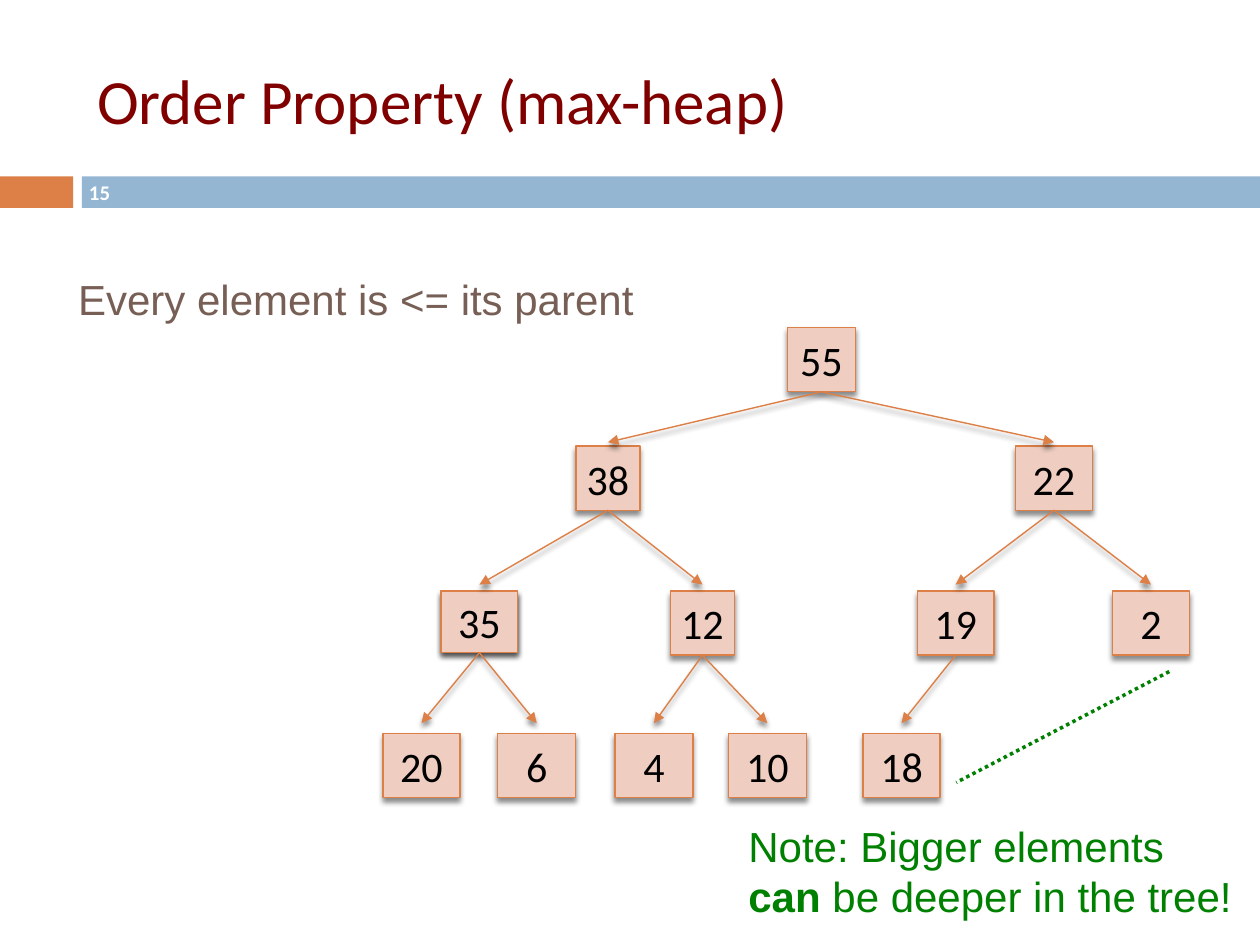
from dataclasses import dataclass

from lxml import etree
from pptx import Presentation
from pptx.dml.color import RGBColor
from pptx.enum.dml import MSO_LINE
from pptx.enum.shapes import MSO_CONNECTOR, MSO_SHAPE
from pptx.enum.text import MSO_ANCHOR, MSO_AUTO_SIZE, PP_ALIGN
from pptx.oxml.ns import qn
from pptx.util import Inches, Pt

RECT = MSO_SHAPE.RECTANGLE
STRAIGHT = MSO_CONNECTOR.STRAIGHT
DOTTED = MSO_LINE.ROUND_DOT
MIDDLE, TOP = MSO_ANCHOR.MIDDLE, MSO_ANCHOR.TOP
LEFT, CENTER = PP_ALIGN.LEFT, PP_ALIGN.CENTER
NO_AUTOFIT = MSO_AUTO_SIZE.NONE
BOTTOM_SIDE = 2

ORANGE, BLUE, PINK = "DD8047", "94B6D2", "EFCDC1"
MAROON, BROWN, GREEN = "800000", "775F55", "008000"
BLACK, WHITE = "000000", "FFFFFF"
OUTLINE = 0.79
INSET = 0.04


@dataclass(frozen=True)
class Node:
    value: str
    level: int
    left: float
    width: float = 0.61
    height: float = 0.51
    parent: str = ""

    @property
    def center(self) -> float:
        return self.left + self.width / 2


# Top of each tree level, and the gap between an arrow tip and its node
LEVEL_TOPS = (2.6, 3.54, 4.69, 5.82)
TIP_GAPS = (0, 0.03, 0.05, 0.08)

HEAP = (
    Node("55", 0, 6.25, 0.54),
    Node("38", 1, 4.57, 0.51, parent="55"),
    Node("22", 1, 8.06, parent="55"),
    Node("35", 2, 3.5, height=0.49, parent="38"),
    Node("12", 2, 5.32, 0.51, parent="38"),
    Node("19", 2, 7.28, parent="22"),
    Node("2", 2, 8.83, parent="22"),
    Node("20", 3, 3.04, parent="35"),
    Node("6", 3, 3.95, 0.62, parent="35"),
    Node("4", 3, 4.88, 0.62, parent="12"),
    Node("10", 3, 5.78, 0.62, parent="12"),
    Node("18", 3, 6.85, parent="19"),
)
BACKING = Node("", 2, 3.5, height=0.47)


def rgb(color: str) -> RGBColor:
    return RGBColor.from_string(color)


def box(left: float, top: float, width: float, height: float) -> tuple:
    return Inches(left), Inches(top), Inches(width), Inches(height)


def place(shape, *bounds: float) -> None:
    shape.left, shape.top, shape.width, shape.height = box(*bounds)


def add_run(paragraph, text: str, size: float, font: str, color: str, bold: bool = False) -> None:
    run = paragraph.add_run()
    run.text = text
    run.font.size = Pt(size)
    run.font.name = font
    run.font.bold = bold
    run.font.color.rgb = rgb(color)


def format_frame(frame, anchor, align, inset: bool = True, wrap: bool = True):
    """Set up a text frame and return its first paragraph."""
    frame.auto_size = NO_AUTOFIT
    frame.word_wrap = wrap
    frame.vertical_anchor = anchor
    paragraph = frame.paragraphs[0]
    paragraph.alignment = align
    paragraph.space_before = Pt(0)
    if inset:
        frame.margin_left = frame.margin_top = frame.margin_bottom = 0
        frame.margin_right = Inches(INSET)
        properties = paragraph._p.get_or_add_pPr()
        properties.set("marL", str(Inches(INSET)))
        properties.set("indent", "0")
        etree.SubElement(properties, qn("a:buNone"))
    return paragraph


def add_shadow(shape) -> None:
    effects = etree.SubElement(shape._element.spPr, qn("a:effectLst"))
    shadow = etree.SubElement(effects, qn("a:outerShdw"), blurRad=str(Pt(3)),
                              dist=str(Pt(2.4)), dir="5400000", rotWithShape="0")
    color = etree.SubElement(shadow, qn("a:srgbClr"), val=BLACK)
    etree.SubElement(color, qn("a:alpha"), val="45000")


def set_line(shape, color: str, width: float) -> None:
    shape.line.width = Pt(width)
    shape.line.color.rgb = rgb(color)


def add_band(slide, left: float, width: float, color: str) -> None:
    band = slide.shapes.add_shape(RECT, *box(left, 1.4, width, 0.25))
    band.fill.solid()
    band.fill.fore_color.rgb = rgb(color)
    band.line.fill.background()
    band.shadow.inherit = False


def add_node(slide, node: Node):
    square = slide.shapes.add_shape(
        RECT, *box(node.left, LEVEL_TOPS[node.level], node.width, node.height))
    square.fill.solid()
    square.fill.fore_color.rgb = rgb(PINK)
    set_line(square, ORANGE, OUTLINE)
    add_shadow(square)
    if node.value:
        paragraph = format_frame(square.text_frame, MIDDLE, CENTER)
        add_run(paragraph, node.value, 24, "Calibri", BLACK)
    return square


def add_branch(slide, parent_square, child: Node) -> None:
    tip_y = LEVEL_TOPS[child.level] - TIP_GAPS[child.level]
    branch = slide.shapes.add_connector(
        STRAIGHT, 0, 0, Inches(child.center), Inches(tip_y))
    branch.begin_connect(parent_square, BOTTOM_SIDE)
    set_line(branch, ORANGE, OUTLINE)
    etree.SubElement(branch.line._get_or_add_ln(), qn("a:tailEnd"), type="triangle")
    add_shadow(branch)


def main() -> None:
    deck = Presentation()
    deck.slide_width, deck.slide_height = Inches(10), Inches(7.5)
    slide = deck.slides.add_slide(deck.slide_layouts[1])

    # Header: title, bands and page number
    title = slide.shapes.title
    place(title, 0.67, 0.25, 8.92, 1.08)
    heading = format_frame(title.text_frame, MIDDLE, LEFT, inset=False)
    add_run(heading, "Order Property (max-heap)", 36, "Calibri", MAROON)
    add_band(slide, 0, 0.58, ORANGE)
    add_band(slide, 0.65, 9.35, BLUE)
    page_number = slide.shapes.add_textbox(*box(0.5, 1.39, 0.58, 0.27))
    number = format_frame(page_number.text_frame, MIDDLE, CENTER, inset=False)
    add_run(number, "15", 11.9, "Calibri", WHITE, bold=True)

    # Heap rule
    rule = slide.placeholders[1]
    place(rule, 0.58, 2.17, 4.5, 0.4)
    statement = format_frame(rule.text_frame, TOP, LEFT, wrap=False)
    add_run(statement, "Every element is <= its parent", 24, "Arial", BROWN)

    # Tree: nodes first, then the branches between them
    add_node(slide, BACKING)
    squares = {node.value: add_node(slide, node) for node in HEAP}
    for node in HEAP:
        if node.parent:
            add_branch(slide, squares[node.parent], node)

    # Note with its dotted line between the compared nodes
    note = slide.shapes.add_textbox(*box(5.9, 6.51, 3.93, 0.81))
    remark = format_frame(note.text_frame, TOP, LEFT, wrap=False)
    add_run(remark, "Note: Bigger elements", 24, "Arial", GREEN)
    remark.add_line_break()
    add_run(remark, "can", 24, "Arial", GREEN, bold=True)
    add_run(remark, " be deeper in the tree!", 24, "Arial", GREEN)
    comparison = slide.shapes.add_connector(
        STRAIGHT, Inches(9.28), Inches(5.33), Inches(7.59), Inches(6.21))
    set_line(comparison, GREEN, 2)
    comparison.line.dash_style = DOTTED
    etree.SubElement(comparison._element.spPr, qn("a:effectLst"))

    deck.save("out.pptx")


if __name__ == "__main__":
    main()
